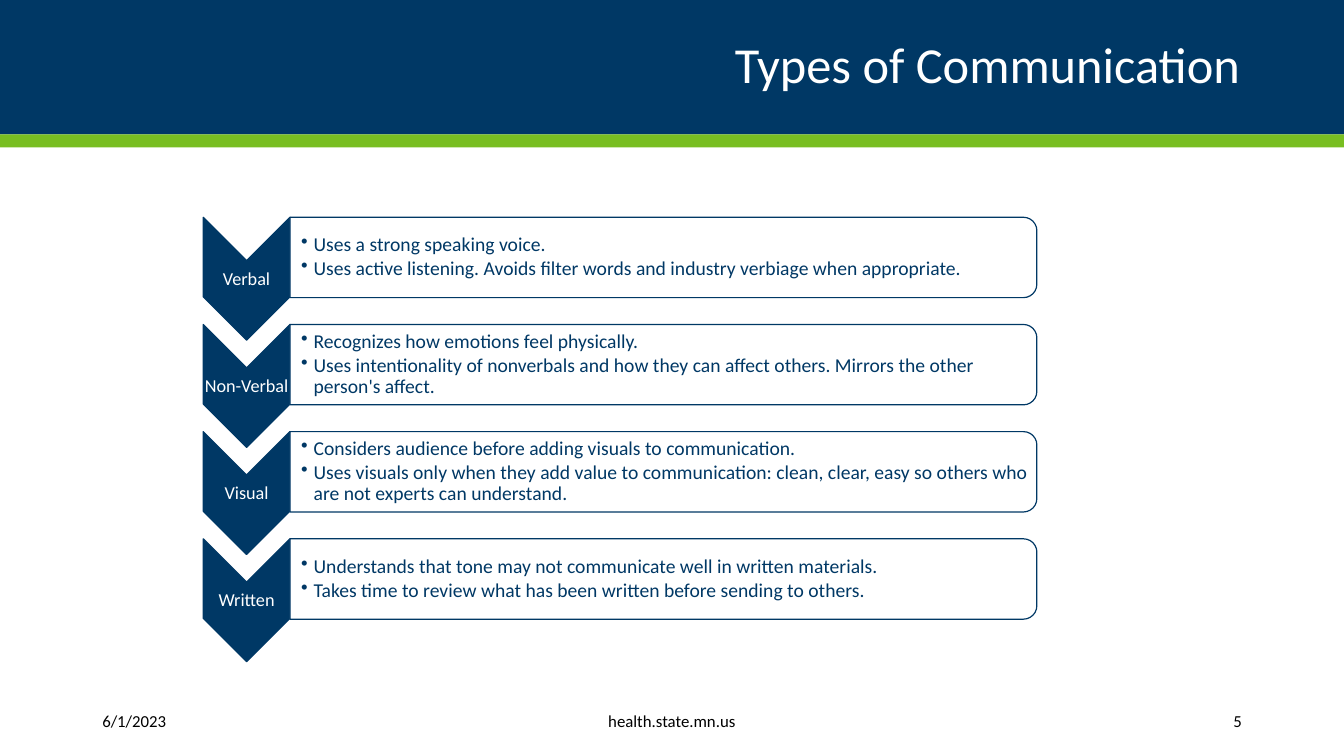
from dataclasses import dataclass

from lxml import etree
from pptx import Presentation
from pptx.dml.color import RGBColor
from pptx.enum.shapes import MSO_SHAPE
from pptx.enum.text import MSO_ANCHOR, PP_ALIGN
from pptx.oxml.ns import qn
from pptx.util import Pt

RECTANGLE = MSO_SHAPE.RECTANGLE
CHEVRON = MSO_SHAPE.CHEVRON
ROUNDED_TOP = MSO_SHAPE.ROUND_2_SAME_RECTANGLE
MIDDLE = MSO_ANCHOR.MIDDLE
LEFT, CENTER, RIGHT = PP_ALIGN.LEFT, PP_ALIGN.CENTER, PP_ALIGN.RIGHT


@dataclass(frozen=True)
class Theme:
    font: str = "Calibri"
    navy: RGBColor = RGBColor(0x00, 0x38, 0x65)
    green: RGBColor = RGBColor(0x78, 0xBE, 0x21)
    white: RGBColor = RGBColor(0xFF, 0xFF, 0xFF)
    black: RGBColor = RGBColor(0x00, 0x00, 0x00)
    title_size: int = 36
    body_size: int = 14
    label_size: int = 13
    footer_size: int = 12
    outline: float = 0.85


THEME = Theme()

# Row layout, in points
ROWS_TOP, ROW_PITCH = 155.2, 76.55
CHEVRON_LEFT, CHEVRON_WIDTH, CHEVRON_HEIGHT = 145.2, 61.9, 87.8
LABEL_OFFSET, LABEL_HEIGHT = 31, 26.6
PANEL_LEFT = CHEVRON_LEFT + CHEVRON_WIDTH
PANEL_WIDTH, PANEL_HEIGHT = 533.5, 57.4
PANEL_TEXT_WIDTH, PANEL_TEXT_HEIGHT, PANEL_TEXT_OFFSET = 531.4, 51.8, 2.8
HANGING = 9

TYPES = [
    ("Verbal", [
        "Uses a strong speaking voice.",
        "Uses active listening. Avoids filter words and industry verbiage when appropriate.",
    ]),
    ("Non-Verbal", [
        "Recognizes how emotions feel physically.",
        "Uses intentionality of nonverbals and how they can affect others. "
        "Mirrors the other person's affect.",
    ]),
    ("Visual", [
        "Considers audience before adding visuals to communication.",
        "Uses visuals only when they add value to communication: clean, clear, "
        "easy so others who are not experts can understand.",
    ]),
    ("Written", [
        "Understands that tone may not communicate well in written materials.",
        "Takes time to review what has been written before sending to others.",
    ]),
]

FOOTERS = [
    (66, 107.5, "6/1/2023", LEFT),
    (260, 440, "health.state.mn.us", CENTER),
    (779, 115.2, "5", RIGHT),
]


def add_block(page, kind, left, top, width, height, fill, line=None):
    block = page.shapes.add_shape(kind, Pt(left), Pt(top), Pt(width), Pt(height))
    block.shadow.inherit = False
    block.fill.solid()
    block.fill.fore_color.rgb = fill
    if line is None:
        block.line.fill.background()
    else:
        block.line.color.rgb = line
        block.line.width = Pt(THEME.outline)
    return block


def add_turned_block(page, kind, left, top, width, height, fill):
    """Add a shape turned by 90 degrees that covers the given area."""
    shift = (width - height) / 2
    block = add_block(page, kind, left + shift, top - shift, height, width, fill, THEME.navy)
    block.rotation = 90
    return block


def add_text(page, left, top, width, height, lines, size, color,
             align=LEFT, insets=(7.2, 3.6, 7.2, 3.6), spacing=None, bullets=False):
    box = page.shapes.add_textbox(Pt(left), Pt(top), Pt(width), Pt(height))
    frame = box.text_frame
    frame.word_wrap = True
    frame.vertical_anchor = MIDDLE
    frame.margin_left, frame.margin_top, frame.margin_right, frame.margin_bottom = map(Pt, insets)
    for index, line in enumerate(lines):
        para = frame.add_paragraph() if index else frame.paragraphs[0]
        para.alignment = align
        if spacing:
            para.line_spacing = spacing
        if bullets:
            para.space_after = Pt(2)
            add_bullet(para)
        span = para.add_run()
        span.text = line
        span.font.name = THEME.font
        span.font.size = Pt(size)
        span.font.color.rgb = color


def add_bullet(para):
    properties = para._p.get_or_add_pPr()
    properties.set("marL", str(Pt(HANGING)))
    properties.set("indent", str(-Pt(HANGING)))
    etree.SubElement(properties, qn("a:buChar")).set("char", "•")


def set_opacity(block, percent):
    color = block.fill._xPr.find(qn("a:solidFill"))[0]
    etree.SubElement(color, qn("a:alpha")).set("val", str(percent * 1000))


def add_row(page, top, label, points):
    # Chevron with its label
    add_turned_block(page, CHEVRON, CHEVRON_LEFT, top,
                     CHEVRON_WIDTH, CHEVRON_HEIGHT, THEME.navy)
    add_text(page, CHEVRON_LEFT, top + LABEL_OFFSET, CHEVRON_WIDTH, LABEL_HEIGHT,
             [label], THEME.label_size, THEME.white, CENTER, (0.6,) * 4, 0.9)
    # Panel with its points
    panel = add_turned_block(page, ROUNDED_TOP, PANEL_LEFT, top,
                             PANEL_WIDTH, PANEL_HEIGHT, THEME.white)
    set_opacity(panel, 90)
    add_text(page, PANEL_LEFT, top + PANEL_TEXT_OFFSET, PANEL_TEXT_WIDTH, PANEL_TEXT_HEIGHT,
             points, THEME.body_size, THEME.navy,
             insets=(7.9, 0.6, 0.6, 0.6), spacing=0.9, bullets=True)


def main():
    deck = Presentation()
    deck.slide_width, deck.slide_height = Pt(960), Pt(540)
    page = deck.slides.add_slide(deck.slide_layouts[6])

    # Header
    add_block(page, RECTANGLE, 0, 0, 960, 96, THEME.navy)
    add_block(page, RECTANGLE, 0, 96, 960, 9.2, THEME.green)
    add_text(page, 66, 0, 828, 96, ["Types of Communication "], THEME.title_size,
             THEME.white, RIGHT, (0, 3.6, 0, 3.6), 0.9)

    # Communication types
    for index, (label, points) in enumerate(TYPES):
        add_row(page, ROWS_TOP + index * ROW_PITCH, label, points)

    # Footer
    for left, width, words, align in FOOTERS:
        add_text(page, left, 500.5, width, 28.8, [words],
                 THEME.footer_size, THEME.black, align)

    deck.save("out.pptx")


if __name__ == "__main__":
    main()
